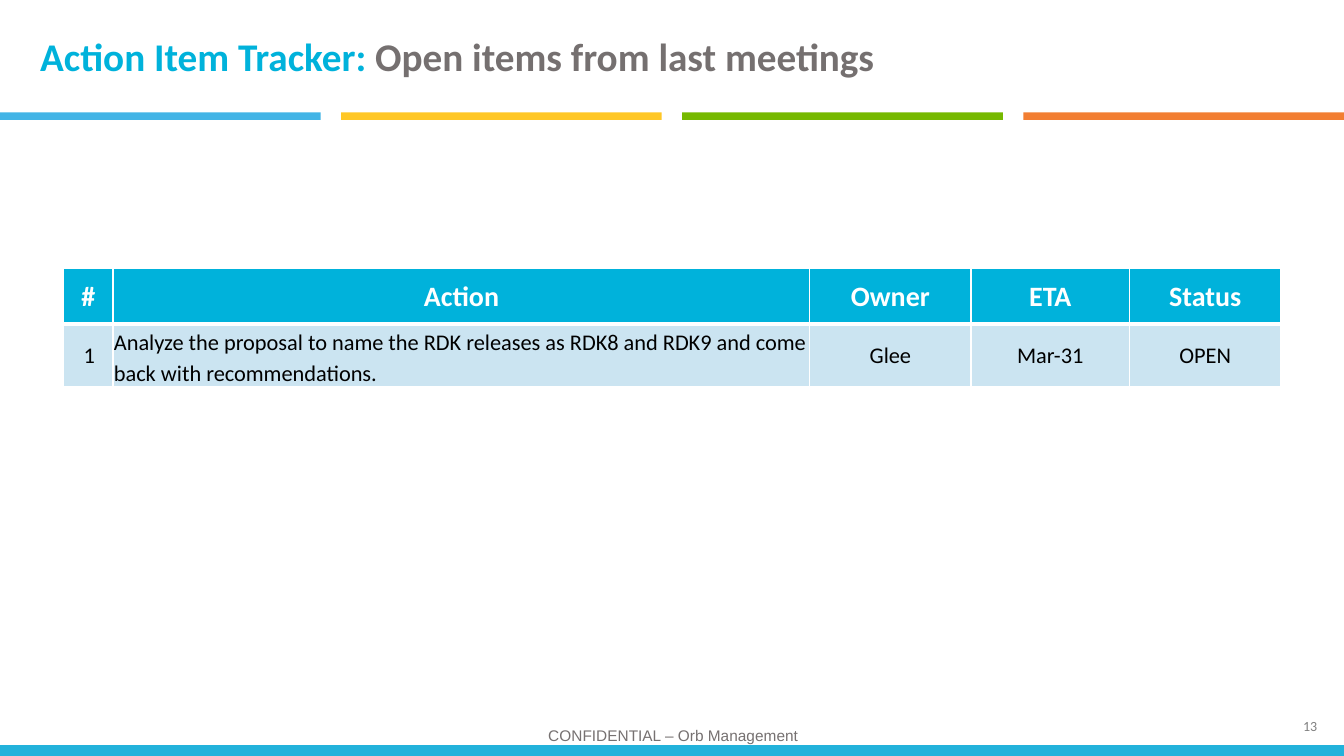
from lxml import etree
from pptx import Presentation
from pptx.dml.color import RGBColor
from pptx.enum import shapes, text
from pptx.oxml import ns
from pptx.util import Cm, Pt

TITLE = [("Action Item Tracker: ", "00B2DB"), ("Open items from last meetings", "757070")]
STRIPES = ["42B4E6", "FFC726", "76B900", "F27E32"]
HEADINGS = ["#", "Action", "Owner", "ETA", "Status"]
ACTIONS = [
    ("1", "Analyze the proposal to name the RDK releases as RDK8 and RDK9 "
     "and come back with recommendations.", "Glee", "Mar-31", "OPEN"),
]
CONFIDENTIALITY = "CONFIDENTIAL – Orb Management"
PAGE = "13"
COLUMN_WIDTHS = [1.25, 17.56, 4.06, 4, 3.81]
ROW_HEIGHTS = [1.4, 1.3]
WIDTH, HEIGHT = 33.87, 19.05
STRIPE_WIDTH = 8.08
FOOT_HEIGHT = 0.27


def rgb(value):
    return RGBColor.from_string(value)


def style(font, size, color, name="Calibri", bold=False):
    font.name, font.size, font.bold = name, Pt(size), bold
    font.color.rgb = rgb(color)


def add_band(slide, left, top, width, height, color):
    band = slide.shapes.add_shape(shapes.MSO_SHAPE.RECTANGLE,
                                  Cm(left), Cm(top), Cm(width), Cm(height))
    band.fill.solid()
    band.fill.fore_color.rgb = rgb(color)
    band.line.fill.background()
    band.shadow.inherit = False


def add_label(slide, box, words, wrap):
    frame = slide.shapes.add_textbox(*map(Cm, box)).text_frame
    frame.word_wrap = wrap
    frame.text = words
    return frame


def add_borders(cell, bottom):
    properties = cell._tc.get_or_add_tcPr()
    for side, points in (("L", 1), ("R", 1), ("T", 1), ("B", bottom)):
        line = etree.SubElement(properties, ns.qn(f"a:ln{side}"), w=str(Pt(points)))
        fill = etree.SubElement(line, ns.qn("a:solidFill"))
        etree.SubElement(fill, ns.qn("a:srgbClr"), val="FFFFFF")


def fill_cell(cell, words, row, column):
    header = row == 0
    add_borders(cell, 3 if header else 1)
    cell.fill.solid()
    cell.fill.fore_color.rgb = rgb("00B2DB" if header else "CBE4F1")
    cell.vertical_anchor = text.MSO_ANCHOR.MIDDLE
    cell.margin_left = Cm(0.51 if not header and column == 0 else 0.02)
    cell.margin_right = cell.margin_top = Cm(0.02)
    cell.margin_bottom = 0
    cell.text = words
    paragraph = cell.text_frame.paragraphs[0]
    centred = header or column > 1
    paragraph.alignment = text.PP_ALIGN.CENTER if centred else text.PP_ALIGN.LEFT
    if not header and column == 1:
        paragraph.line_spacing = 1.15
        paragraph.space_after = Pt(8)
    style(paragraph.font, 20 if header else 16, "FFFFFF" if header else "000000", bold=header)


def add_tracker(slide):
    rows = [HEADINGS, *ACTIONS]
    tracker = slide.shapes.add_table(len(rows), len(HEADINGS), Cm(1.6), Cm(6.76),
                                     Cm(sum(COLUMN_WIDTHS)), Cm(sum(ROW_HEIGHTS))).table
    for column, width in zip(tracker.columns, COLUMN_WIDTHS):
        column.width = Cm(width)
    for row, height in zip(tracker.rows, ROW_HEIGHTS):
        row.height = Cm(height)
    for r, entries in enumerate(rows):
        for c, words in enumerate(entries):
            fill_cell(tracker.cell(r, c), words, r, c)


def add_title(slide):
    title = slide.shapes.title
    title.left, title.top, title.width, title.height = map(Cm, (0.76, 0.18, 31.8, 2.44))
    frame = title.text_frame
    frame.auto_size = text.MSO_AUTO_SIZE.NONE
    frame.vertical_anchor = text.MSO_ANCHOR.MIDDLE
    heading = frame.paragraphs[0]
    heading.alignment = text.PP_ALIGN.LEFT
    for words, color in TITLE:
        part = heading.add_run()
        part.text = words
        style(part.font, 28, color, bold=True)


def main():
    deck = Presentation()
    deck.slide_width, deck.slide_height = Cm(WIDTH), Cm(HEIGHT)
    slide = deck.slides.add_slide(deck.slide_layouts[5])

    add_band(slide, 0, HEIGHT - FOOT_HEIGHT, WIDTH, FOOT_HEIGHT, "22B2DB")
    page = add_label(slide, (32.59, 17.96, 0.94, 0.69), PAGE, False)
    style(page.paragraphs[0].font, 10, "808080")

    notice = add_label(slide, (11.33, 18.26, 11.28, 0.64), CONFIDENTIALITY, True)
    notice.vertical_anchor = text.MSO_ANCHOR.MIDDLE
    notice.paragraphs[0].alignment = text.PP_ALIGN.CENTER
    notice.paragraphs[0].line_spacing = 0.8
    style(notice.paragraphs[0].font, 11, "767171", "Arial")

    pitch = (WIDTH - STRIPE_WIDTH) / (len(STRIPES) - 1)
    for i, color in enumerate(STRIPES):
        add_band(slide, i * pitch, 2.83, STRIPE_WIDTH, 0.19, color)

    add_title(slide)
    add_tracker(slide)
    deck.save("out.pptx")


if __name__ == "__main__":
    main()
